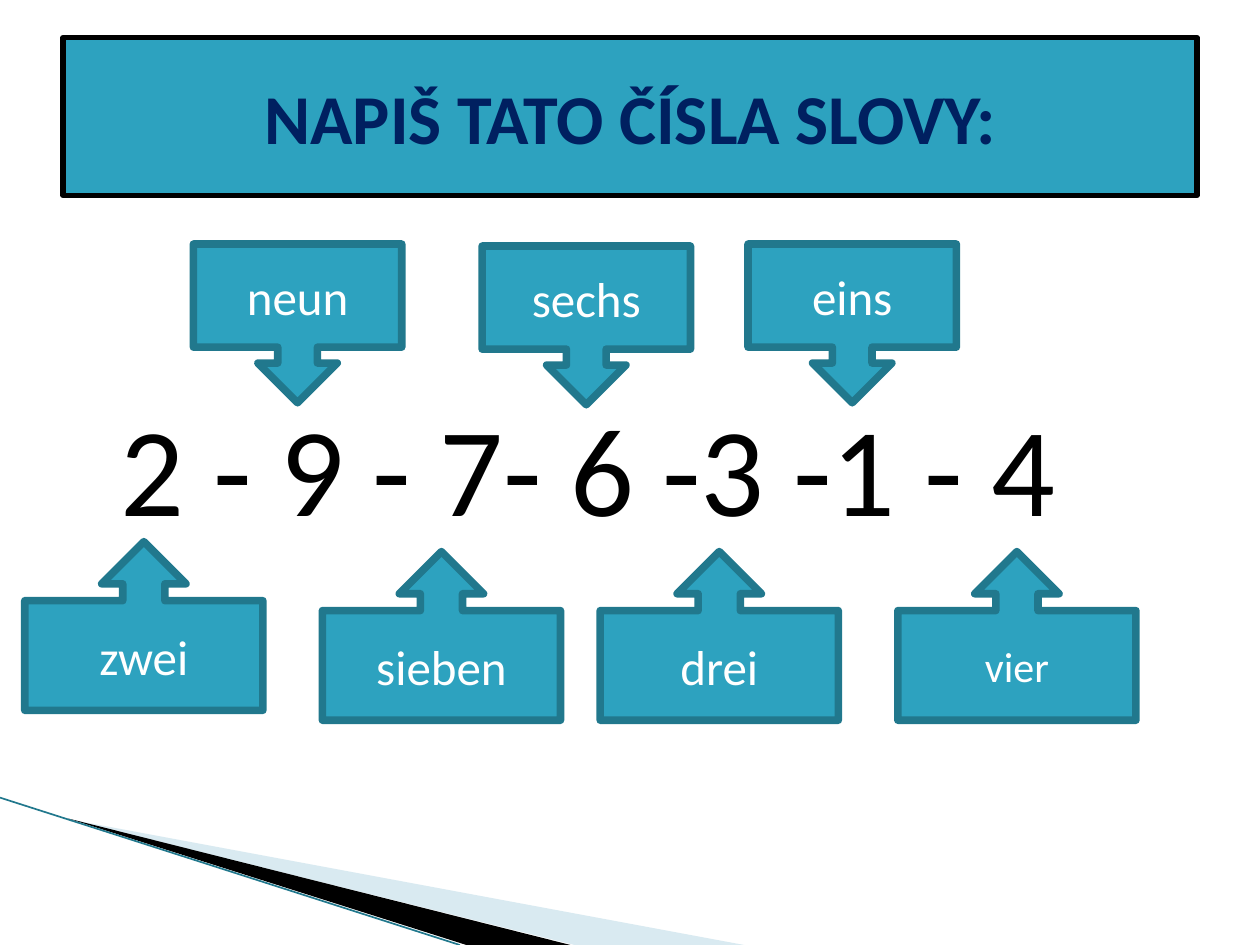
import pptx
import pptx.util
import pptx.dml.color
import pptx.enum.shapes
import pptx.enum.text
import pptx.oxml
import pptx.oxml.ns

Cm, Pt = pptx.util.Cm, pptx.util.Pt
Kind = pptx.enum.shapes.MSO_SHAPE
Anchor = pptx.enum.text.MSO_ANCHOR

HUES = {"teal": "2DA2BF", "edge": "21788D", "navy": "002060",
        "black": "000000", "white": "FFFFFF", "pale": "A0CBDC"}
FONT = "Calibri"
TITLE = "NAPIŠ TATO ČÍSLA SLOVY:"
DIGITS = "2 - 9 - 7- 6 -3 -1 - 4"

ROWS = [
    (Kind.UP_ARROW_CALLOUT, 4.8, 3.4, [
        ("zwei", 0.5, 10.92, 28), ("sieben", 6.5, 11.12, 28),
        ("drei", 12.1, 11.12, 28), ("vier", 18.1, 11.12, 24)]),
    (Kind.DOWN_ARROW_CALLOUT, 4.2, 3.2, [
        ("neun", 3.9, 4.92, 28), ("sechs", 9.72, 4.96, 28),
        ("eins", 15.08, 4.92, 28)]),
]
WEDGES = [
    ("pale", 40, [(1.4, 16.52), (15, 19.05), (11.58, 19.05)]),
    ("black", 100, [(1.37, 16.5), (11.5, 19.05), (9.4, 19.05)]),
]
STRIPE = [(0, 16.08), (9.27, 19.05)]


def hue(name):
    return pptx.dml.color.RGBColor.from_string(HUES[name])


def paint(shape, fill, edge=None, width=0):
    shape.shadow.inherit = False
    shape.fill.solid()
    shape.fill.fore_color.rgb = hue(fill)
    if edge:
        shape.line.color.rgb = hue(edge)
        shape.line.width = Pt(width)
    else:
        shape.line.fill.background()


def write(shape, text, size, tint, bold=False, anchor=Anchor.MIDDLE):
    frame = shape.text_frame
    frame.word_wrap = True
    frame.vertical_anchor = anchor
    frame.text = text
    para = frame.paragraphs[0]
    para.alignment = pptx.enum.text.PP_ALIGN.CENTER
    font = para.runs[0].font
    font.name, font.size, font.bold = FONT, Pt(size), bold
    font.color.rgb = hue(tint)


def wedge(shapes, tint, alpha, points):
    spots = [(Cm(x), Cm(y)) for x, y in points]
    path = shapes.build_freeform(*spots[0])
    path.add_line_segments(spots[1:], close=True)
    shape = path.convert_to_shape()
    paint(shape, tint)
    if alpha < 100:
        color = shape._element.spPr.find(".//" + pptx.oxml.ns.qn("a:srgbClr"))
        color.append(pptx.oxml.parse_xml(
            f'<a:alpha {pptx.oxml.ns.nsdecls("a")} val="{alpha * 1000}"/>'))


def stripe(shapes):
    ends = [Cm(value) for spot in STRIPE for value in spot]
    line = shapes.add_connector(pptx.enum.shapes.MSO_CONNECTOR.STRAIGHT, *ends)
    line.line.color.rgb = hue("edge")
    line.line.width = Pt(0.95)
    line._element.spPr.append(pptx.oxml.parse_xml(
        f'<a:effectLst {pptx.oxml.ns.nsdecls("a")}/>'))


def main():
    deck = pptx.Presentation()
    deck.slide_width, deck.slide_height = Cm(25.4), Cm(19.05)
    shapes = deck.slides.add_slide(deck.slide_layouts[6]).shapes

    for item in WEDGES:
        wedge(shapes, *item)
    stripe(shapes)

    title = shapes.add_shape(Kind.RECTANGLE, Cm(1.27), Cm(0.76), Cm(22.86), Cm(3.18))
    paint(title, "teal", "black", 3)
    write(title, TITLE, 40, "navy", bold=True)

    digits = shapes.add_textbox(Cm(0), Cm(7.75), Cm(23.72), Cm(3.3))
    write(digits, DIGITS, 72, "black", anchor=Anchor.TOP)

    for kind, width, height, words in ROWS:
        for word, left, top, size in words:
            box = shapes.add_shape(kind, Cm(left), Cm(top), Cm(width), Cm(height))
            paint(box, "teal", "edge", 4.33)
            write(box, word, size, "white")

    deck.save("out.pptx")


if __name__ == "__main__":
    main()
